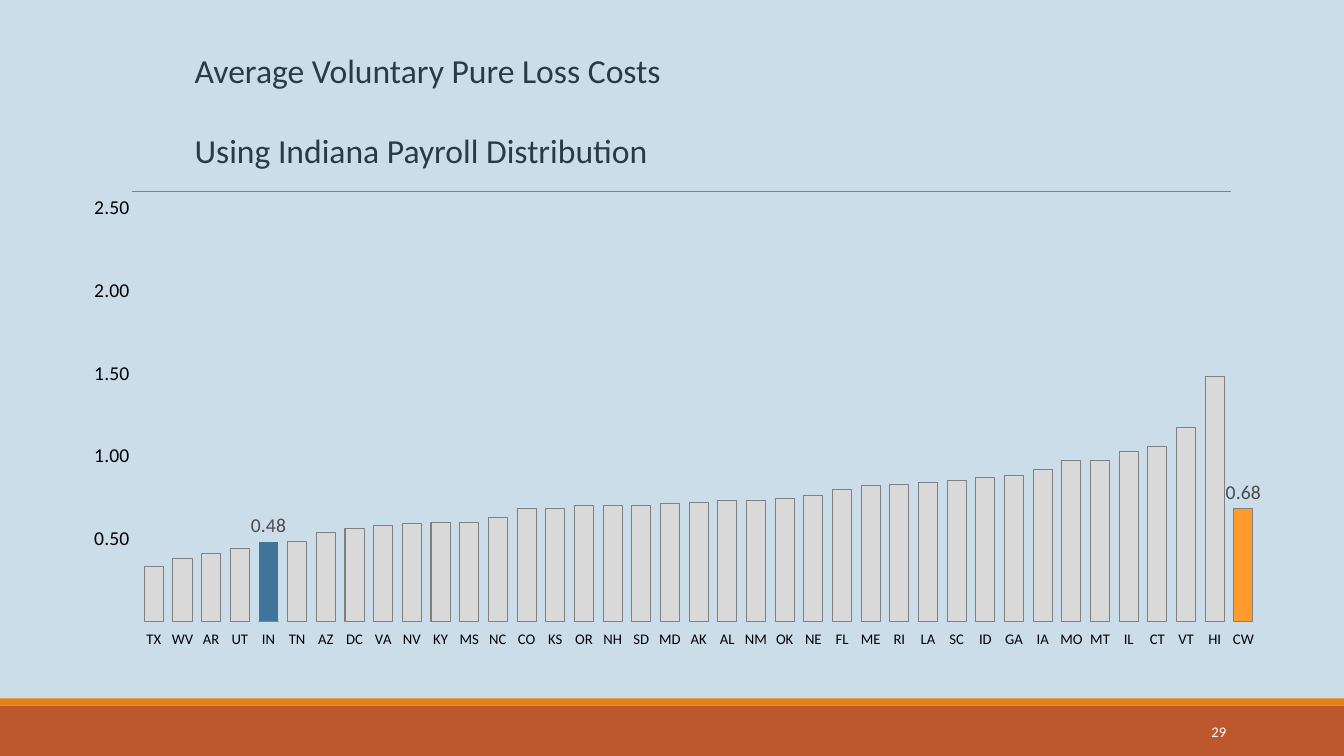
from lxml.etree import SubElement
from pptx import Presentation
from pptx.chart.data import CategoryChartData
from pptx.dml.color import RGBColor
from pptx.enum.chart import XL_CHART_TYPE, XL_LABEL_POSITION, XL_TICK_LABEL_POSITION
from pptx.enum.shapes import MSO_CONNECTOR, MSO_SHAPE
from pptx.enum.text import MSO_ANCHOR, PP_ALIGN
from pptx.oxml import parse_xml
from pptx.oxml.ns import nsdecls, qn
from pptx.util import Inches, Pt

LOSS_COSTS = {
    "TX": 0.33, "WV": 0.38, "AR": 0.41, "UT": 0.44, "IN": 0.48, "TN": 0.48,
    "AZ": 0.54, "DC": 0.56, "VA": 0.58, "NV": 0.59, "KY": 0.60, "MS": 0.60,
    "NC": 0.63, "CO": 0.68, "KS": 0.68, "OR": 0.70, "NH": 0.70, "SD": 0.70,
    "MD": 0.71, "AK": 0.72, "AL": 0.73, "NM": 0.73, "OK": 0.74, "NE": 0.76,
    "FL": 0.80, "ME": 0.82, "RI": 0.83, "LA": 0.84, "SC": 0.85, "ID": 0.87,
    "GA": 0.88, "IA": 0.92, "MO": 0.97, "MT": 0.97, "IL": 1.03, "CT": 1.06,
    "VT": 1.17, "HI": 1.48, "CW": 0.68,
}
HOME_STATE = "IN"
COUNTRYWIDE = "CW"


def color(value):
    return RGBColor.from_string(value)


class SlideBuilder:
    font_name = "Calibri"
    gray = "808080"
    label_gray = "4B4B4B"

    def __init__(self, presentation, background):
        self.slide = presentation.slides.add_slide(presentation.slide_layouts[5])
        self.fill(self.slide.background, background)

    def fill(self, item, value):
        item.fill.solid()
        item.fill.fore_color.rgb = color(value)

    def style(self, font, size, value):
        font.name = self.font_name
        font.size = Pt(size)
        font.bold = False
        font.color.rgb = color(value)

    def outline(self, item, width):
        item.line.color.rgb = color(self.gray)
        item.line.width = Pt(width)

    def band(self, left, top, width, height, value):
        shape = self.slide.shapes.add_shape(
            MSO_SHAPE.RECTANGLE, Inches(left), Inches(top), Inches(width), Inches(height))
        shape.shadow.inherit = False
        self.fill(shape, value)
        shape.line.fill.background()

    def rule(self, left, right, y):
        connector = self.slide.shapes.add_connector(
            MSO_CONNECTOR.STRAIGHT, Inches(left), Inches(y), Inches(right), Inches(y))
        self.outline(connector, 0.5)
        SubElement(connector._element.spPr, qn("a:effectLst"))

    def title(self, left, top, width, height, lines):
        title = self.slide.shapes.title
        title.left, title.top = Inches(left), Inches(top)
        title.width, title.height = Inches(width), Inches(height)
        frame = title.text_frame
        frame.text = "\n".join(lines)
        frame.vertical_anchor = MSO_ANCHOR.TOP
        for index, paragraph in enumerate(frame.paragraphs):
            paragraph.alignment = PP_ALIGN.LEFT
            paragraph.space_before = Pt(29 if index else 0)
            self.style(paragraph.font, 24, "273C47")

    def page_number(self, left, top, width, height, number):
        box = self.slide.shapes.add_textbox(
            Inches(left), Inches(top), Inches(width), Inches(height))
        frame = box.text_frame
        frame.word_wrap = True
        frame.vertical_anchor = MSO_ANCHOR.MIDDLE
        paragraph = frame.paragraphs[0]
        paragraph.text = str(number)
        paragraph.alignment = PP_ALIGN.RIGHT
        paragraph.line_spacing = Pt(12.4)
        self.style(paragraph.font, 10.5, "FFFFFF")

    def column_chart(self, left, top, width, height, costs):
        data = CategoryChartData(number_format="0.00")
        data.categories = list(costs)
        data.add_series("Series 1", [
            cost if state == HOME_STATE else 0 for state, cost in costs.items()])
        data.add_series("Series 2", [
            0 if state == HOME_STATE else cost for state, cost in costs.items()])
        chart = self.slide.shapes.add_chart(
            XL_CHART_TYPE.COLUMN_CLUSTERED, Inches(left), Inches(top),
            Inches(width), Inches(height), data).chart
        self.style(chart.font, 14, self.label_gray)
        chart.has_legend = False
        chart.has_title = False
        self.format_axes(chart)
        self.place_plot(chart, x=0.061, y=0.026, w=0.922, h=0.856)

        plot = chart.plots[0]
        plot.gap_width = 50
        plot.overlap = 100
        plot.vary_by_categories = False
        home, others = plot.series
        home.invert_if_negative = others.invert_if_negative = False
        self.fill(home.format, "40749B")
        self.fill(others.format, "D9D9D9")
        self.outline(others.format, 0.75)
        states = list(costs)
        countrywide = others.points[states.index(COUNTRYWIDE)]
        self.fill(countrywide.format, "FF9B2D")
        self.outline(countrywide.format, 0.75)
        self.label(home, states.index(HOME_STATE))
        self.label(others, states.index(COUNTRYWIDE))

    def label(self, series, index):
        label = series.points[index].data_label
        self.style(label.font, 14, self.label_gray)
        label.position = XL_LABEL_POSITION.OUTSIDE_END
        series.data_labels.show_value = False

    def format_axes(self, chart):
        for axis, size in ((chart.category_axis, 10.5), (chart.value_axis, 14)):
            axis.has_major_gridlines = False
            axis.format.line.fill.background()
            self.style(axis.tick_labels.font, size, "000000")
        chart.category_axis.tick_label_position = XL_TICK_LABEL_POSITION.LOW
        value_axis = chart.value_axis
        value_axis.minimum_scale = 0
        value_axis.maximum_scale = 2.5
        value_axis.major_unit = 0.5
        value_axis.tick_labels.number_format = '0.00;;""'
        value_axis.tick_labels.number_format_is_linked = False

    def place_plot(self, chart, **bounds):
        sizes = "".join(f'<c:{key} val="{value}"/>' for key, value in bounds.items())
        plot_area = chart._chartSpace.chart.plotArea
        for layout in plot_area.findall(qn("c:layout")):
            plot_area.remove(layout)
        plot_area.insert(0, parse_xml(
            f'<c:layout {nsdecls("c")}><c:manualLayout><c:layoutTarget val="inner"/>'
            f'<c:xMode val="edge"/><c:yMode val="edge"/>{sizes}'
            '</c:manualLayout></c:layout>'))


def main():
    presentation = Presentation()
    presentation.slide_width = Inches(13.33)
    presentation.slide_height = Inches(7.5)
    builder = SlideBuilder(presentation, "CCDDEA")
    builder.band(0, 7, 13.33, 0.5, "BD582C")
    builder.band(0, 6.93, 13.33, 0.07, "E48312")
    builder.rule(1.31, 12.21, 1.9)
    builder.page_number(10.83, 7.06, 1.43, 0.4, 29)
    builder.title(1.83, 0.44, 6.68, 1.31, [
        "Average Voluntary Pure Loss Costs", "Using Indiana Payroll Distribution"])
    builder.column_chart(0.65, 1.94, 12.03, 4.79, LOSS_COSTS)
    presentation.save("out.pptx")


if __name__ == "__main__":
    main()
